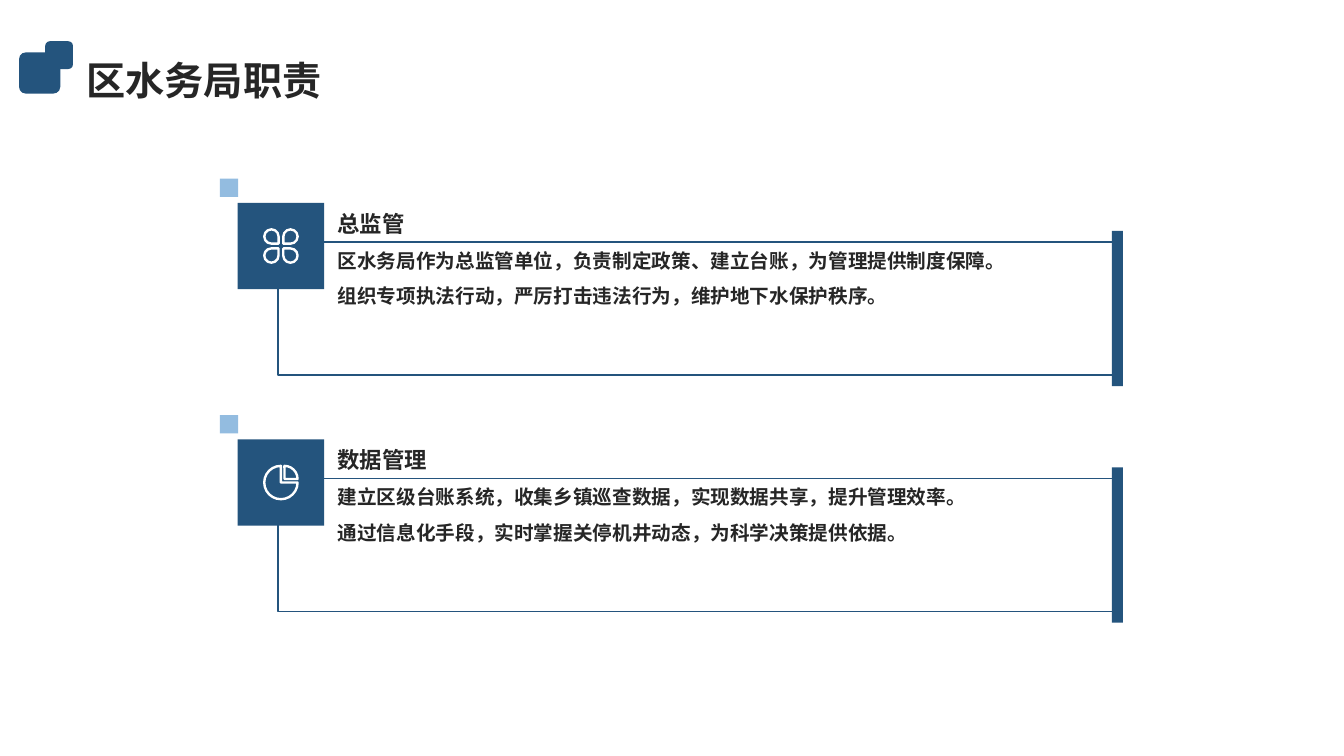
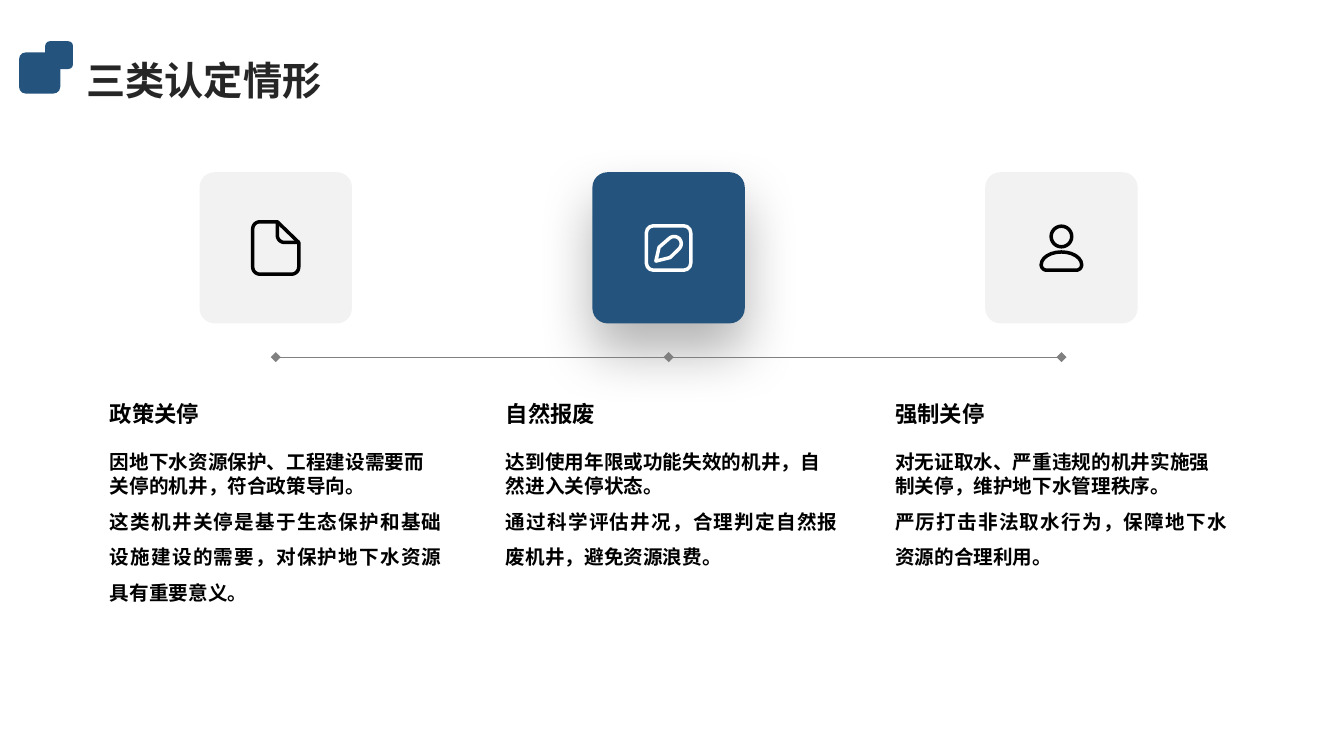
"""Two slides on the water bureau's duties and the three kinds of well closure."""
from dataclasses import dataclass
from math import cos, radians, sin

from lxml.etree import SubElement
from pptx import Presentation
from pptx.dml.color import RGBColor
from pptx.enum.shapes import MSO_CONNECTOR, MSO_SHAPE
from pptx.enum.text import MSO_ANCHOR, MSO_AUTO_SIZE, PP_ALIGN
from pptx.oxml.ns import qn
from pptx.util import Cm, Pt


@dataclass(frozen=True)
class Theme:
    font: str = "Noto Sans CJK SC"
    navy: RGBColor = RGBColor(0x24, 0x54, 0x7D)
    sky: RGBColor = RGBColor(0x93, 0xBC, 0xE0)
    pale: RGBColor = RGBColor(0xF2, 0xF2, 0xF2)
    grey: RGBColor = RGBColor(0x80, 0x80, 0x80)
    ink: RGBColor = RGBColor(0x26, 0x26, 0x26)
    black: RGBColor = RGBColor(0, 0, 0)
    white: RGBColor = RGBColor(0xFF, 0xFF, 0xFF)
    title: int = 28
    heading: int = 16
    body: int = 14


T = Theme()
LEFT, JUSTIFY = PP_ALIGN.LEFT, PP_ALIGN.JUSTIFY


def box(s, kind, x, y, w, h, fill=None, line=None, width=1):
    sp = s.shapes.add_shape(kind, Cm(x), Cm(y), Cm(w), Cm(h))
    sp.shadow.inherit = False
    if fill is None:
        sp.fill.background()
    else:
        sp.fill.solid()
        sp.fill.fore_color.rgb = fill
    if line is None:
        sp.line.fill.background()
    else:
        sp.line.color.rgb = line
        sp.line.width = Pt(width)
    return sp


def write(sp, paras, size, color, anchor=MSO_ANCHOR.TOP):
    tf = sp.text_frame
    tf.text = "\n".join(text for text, _, _ in paras)
    tf.word_wrap = True
    tf.auto_size = MSO_AUTO_SIZE.NONE
    tf.vertical_anchor = anchor
    tf.margin_left = tf.margin_right = tf.margin_top = tf.margin_bottom = 0
    for p, (_, spacing, align) in zip(tf.paragraphs, paras):
        p.line_spacing = spacing
        p.alignment = align
        p.space_before = Pt(0)
        for r in p.runs:
            r.font.size = Pt(size)
            r.font.bold = True
            r.font.color.rgb = color
            r.font.name = T.font
            SubElement(r._r.get_or_add_rPr(), qn("a:ea")).set("typeface", T.font)


prs = Presentation()
prs.slide_width, prs.slide_height = Cm(33.87), Cm(19.05)

for title in ("区水务局职责", "三类认定情形"):
    s = prs.slides.add_slide(prs.slide_layouts[5])
    s.background.fill.solid()
    s.background.fill.fore_color.rgb = T.white
    sp = s.shapes.title
    sp.left, sp.top, sp.width, sp.height = Cm(2.18), Cm(1.3), Cm(29.64), Cm(1.3)
    write(sp, [(title, 1.1, LEFT)], T.title, T.ink, MSO_ANCHOR.MIDDLE)
    for x, y, side in ((0.48, 1.32, 1.04), (1.14, 1.04, 0.7)):
        box(s, MSO_SHAPE.ROUNDED_RECTANGLE, x, y, side, side, T.navy)

duties, cases = prs.slides

DUTIES = [
    ("总监管",
     "区水务局作为总监管单位，负责制定政策、建立台账，为管理提供制度保障。",
     "组织专项执法行动，严厉打击违法行为，维护地下水保护秩序。"),
    ("数据管理",
     "建立区级台账系统，收集乡镇巡查数据，实现数据共享，提升管理效率。",
     "通过信息化手段，实时掌握关停机井动态，为科学决策提供依据。"),
]
ICON_X = 7.08
for i, (heading, first, second) in enumerate(DUTIES):
    y = 4.5 + 5.96 * i
    box(duties, MSO_SHAPE.RECTANGLE, 7.01, y + 1.6, 21.23, 3.35, T.white, T.navy)
    box(duties, MSO_SHAPE.RECTANGLE, 28.02, y + 1.32, 0.28, 3.91, T.navy)
    box(duties, MSO_SHAPE.RECTANGLE, 5.99, y + 0.61, 2.18, 2.18, T.navy)
    box(duties, MSO_SHAPE.RECTANGLE, 5.54, y, 0.46, 0.46, T.sky)
    sp = duties.shapes.add_textbox(Cm(8.51), Cm(y + 0.43), Cm(19.05), Cm(1.04))
    write(sp, [(heading, Pt(20), LEFT)], T.heading, T.ink, MSO_ANCHOR.BOTTOM)
    sp = duties.shapes.add_textbox(Cm(8.51), Cm(y + 1.75), Cm(19.05), Cm(3))
    write(sp, [(first, Pt(17.2), LEFT), (second, Pt(25.4), LEFT)], T.body, T.ink)

for dx, dy, turn in ((-1, -1, 90), (1, -1, 180), (-1, 1, 0), (1, 1, 270)):
    petal = box(duties, MSO_SHAPE.TEAR, ICON_X + 0.24 * dx - 0.18,
                6.2 + 0.24 * dy - 0.18, 0.36, 0.36, line=T.white, width=1.7)
    petal.rotation = turn

pie_y = 6.2 + 5.96
box(duties, MSO_SHAPE.PIE, ICON_X - 0.42, pie_y - 0.42, 0.84, 0.84,
    line=T.white, width=1.7)
slice_ = box(duties, MSO_SHAPE.PIE, ICON_X + 0.09 - 0.33, pie_y - 0.09 - 0.33,
             0.66, 0.66, line=T.white, width=1.7)
slice_.adjustments[0], slice_.adjustments[1] = 162, 0

CASES = [
    (2.77, T.pale, "政策关停",
     "因地下水资源保护、工程建设需要而关停的机井，符合政策导向。",
     "这类机井关停是基于生态保护和基础设施建设的需要，对保护地下水资源具有重要意义。"),
    (12.75, T.navy, "自然报废",
     "达到使用年限或功能失效的机井，自然进入关停状态。",
     "通过科学评估井况，合理判定自然报废机井，避免资源浪费。"),
    (22.56, T.pale, "强制关停",
     "对无证取水、严重违规的机井实施强制关停，维护地下水管理秩序。",
     "严厉打击非法取水行为，保障地下水资源的合理利用。"),
]
CENTRES = [6.95 + 9.9 * i for i in range(3)]
TILE_Y, LINE_Y = 6.25, 9

for cx, (x, fill, heading, first, second) in zip(CENTRES, CASES):
    tile = box(cases, MSO_SHAPE.ROUNDED_RECTANGLE, cx - 1.92, 4.34, 3.84, 3.81, fill)
    tile.adjustments[0] = 0.1
    if fill == T.navy:
        shadow = SubElement(tile._element.spPr.find(qn("a:effectLst")),
                            qn("a:outerShdw"), blurRad=str(Pt(40)),
                            dist=str(Pt(20)), dir="5400000", algn="t",
                            rotWithShape="0")
        tint = SubElement(shadow, qn("a:srgbClr"), val=str(T.black))
        SubElement(tint, qn("a:alpha"), val="30000")
    diamond = box(cases, MSO_SHAPE.RECTANGLE, cx - 0.09, LINE_Y - 0.09, 0.18, 0.18, T.grey)
    diamond.rotation = 45
    sp = cases.shapes.add_textbox(Cm(x), Cm(9.53), Cm(8.36), Cm(1.42))
    write(sp, [(heading, Pt(29.3), JUSTIFY)], T.heading, T.black, MSO_ANCHOR.MIDDLE)
    sp = cases.shapes.add_textbox(Cm(x), Cm(11.33), Cm(8.36), Cm(3.99))
    write(sp, [(first, Pt(17.2), LEFT), (second, Pt(25.4), JUSTIFY)], T.body, T.black)

axis = cases.shapes.add_connector(MSO_CONNECTOR.STRAIGHT, Cm(CENTRES[0]), Cm(LINE_Y),
                                  Cm(CENTRES[-1]), Cm(LINE_Y))
axis.line.color.rgb = T.grey
axis.line.width = Pt(0.5)
SubElement(axis._element.spPr, qn("a:effectLst"))

frame = box(cases, MSO_SHAPE.ROUNDED_RECTANGLE, CENTRES[1] - 0.56, TILE_Y - 0.56,
            1.12, 1.12, line=T.white, width=2.5)
frame.adjustments[0] = 0.16
box(cases, MSO_SHAPE.OVAL, CENTRES[2] - 0.26, TILE_Y - 0.55, 0.52, 0.52,
    line=T.black, width=2.5)

PAGE = [(-0.4, -0.48, 0.18, 0.18, 180, 270), (0.04, -0.66, 0, 0, 0, 0),
        (0.58, -0.14, 0, 0, 0, 0), (0.4, 0.48, 0.18, 0.18, 0, 90),
        (-0.4, 0.48, 0.18, 0.18, 90, 180)]
FOLD = [(0.04, -0.66, 0, 0, 0, 0), (0.22, -0.32, 0.18, 0.18, 180, 90),
        (0.58, -0.14, 0, 0, 0, 0)]
PENCIL = [(-0.32, 0.33, 0, 0, 0, 0), (-0.24, -0.02, 0, 0, 0, 0),
          (0.14, -0.11, 0.18, 0.18, 225, 405), (0.04, 0.24, 0, 0, 0, 0)]
SHOULDERS = [(0, 0.42, 0.51, 0.32, 180, 360), (0.37, 0.42, 0.14, 0.14, 0, 90),
             (-0.37, 0.42, 0.14, 0.14, 90, 180)]
for cx, arcs, color, close in ((CENTRES[0], PAGE, T.black, True),
                               (CENTRES[0], FOLD, T.black, False),
                               (CENTRES[1], PENCIL, T.white, True),
                               (CENTRES[2], SHOULDERS, T.black, True)):
    pts = []
    for ax, ay, rx, ry, start, end in arcs:
        steps = 12 if rx else 0
        for k in range(steps + 1):
            a = radians(start + (end - start) * k / max(steps, 1))
            pts.append((Cm(cx + ax + rx * cos(a)), Cm(TILE_Y + ay + ry * sin(a))))
    fb = cases.shapes.build_freeform(*pts[0])
    fb.add_line_segments(pts[1:], close=close)
    sp = fb.convert_to_shape()
    sp.shadow.inherit = False
    sp.fill.background()
    sp.line.color.rgb = color
    sp.line.width = Pt(2.5)

prs.save("out.pptx")
